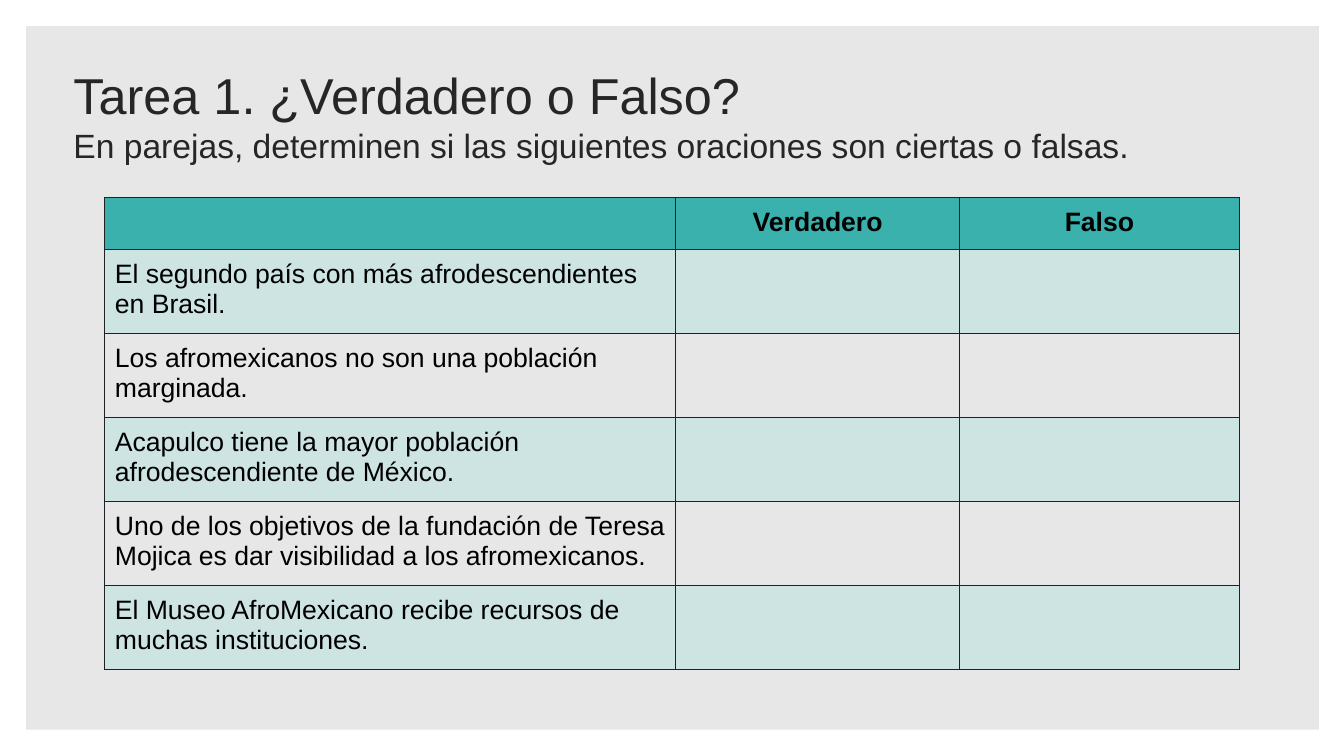
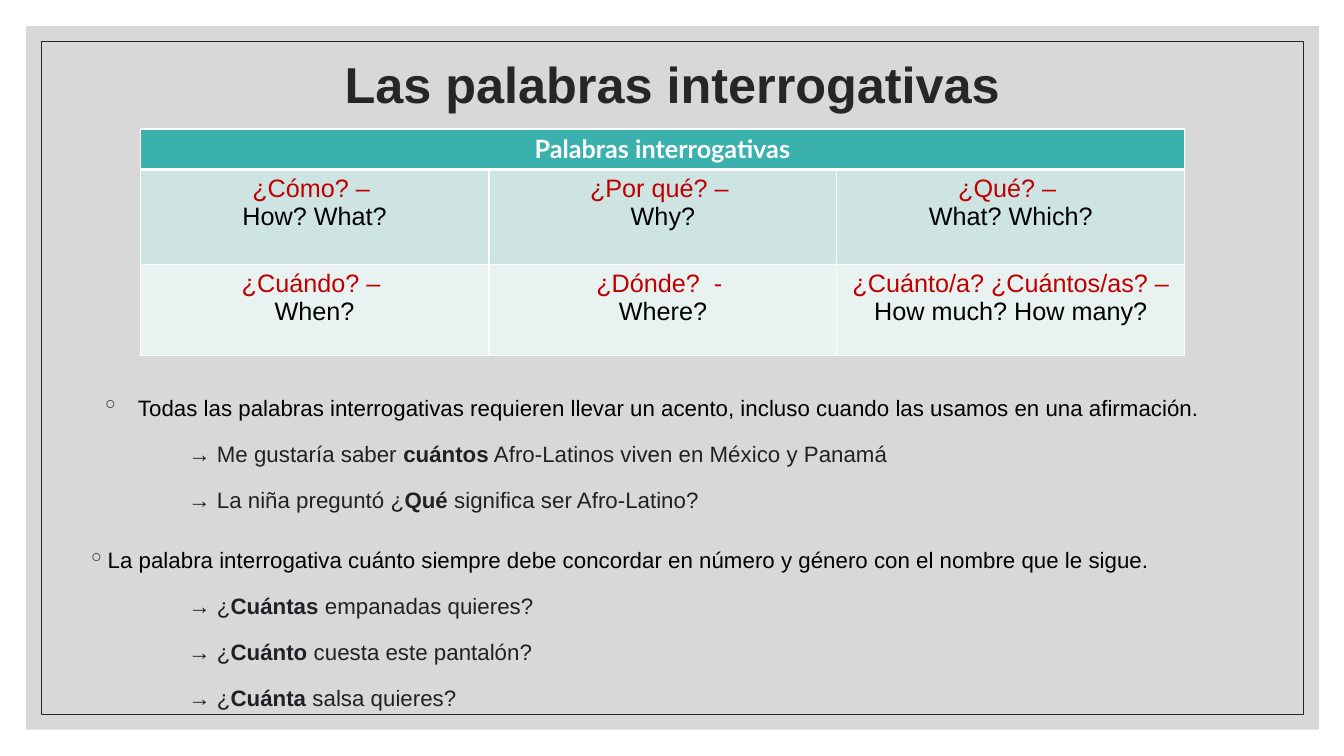
from lxml.etree import SubElement
from pptx import Presentation
from pptx.dml.color import RGBColor
from pptx.enum.shapes import MSO_SHAPE
from pptx.enum.text import MSO_ANCHOR, PP_ALIGN
from pptx.oxml import parse_xml
from pptx.oxml.ns import nsdecls, qn
from pptx.util import Pt

PX = 9144  # 100 px to the inch
FONT = "Arial"
HEADER_FONT = "Lato"
WHITE = RGBColor(0xFF, 0xFF, 0xFF)
BLACK = RGBColor(0x00, 0x00, 0x00)
INK = RGBColor(0x26, 0x26, 0x26)
DARK = RGBColor(0x20, 0x21, 0x24)
RED = RGBColor(0xC0, 0x00, 0x00)
LIGHT_GRAY = RGBColor(0xD8, 0xD8, 0xD8)
MID_GRAY = RGBColor(0xBF, 0xBF, 0xBF)
TEAL = RGBColor(0x3B, 0xB1, 0xAE)
PALE_TEAL = RGBColor(0xCD, 0xE4, 0xE3)
PALEST_TEAL = RGBColor(0xE7, 0xF2, 0xF1)

PANEL = (26, 26, 1282, 698)
FRAME = (41, 41, 1252, 668)

STATEMENTS = [
    "El segundo país con más afrodescendientes en Brasil.",
    "Los afromexicanos no son una población marginada.",
    "Acapulco tiene la mayor población afrodescendiente de México.",
    "Uno de los objetivos de la fundación de Teresa Mojica es dar visibilidad a los afromexicanos.",
    "El Museo AfroMexicano recibe recursos de muchas instituciones.",
]
QUESTION_WORDS = [
    [("¿Cómo? – ", "How? What?"), ("¿Por qué? – ", "Why?"), ("¿Qué? – ", "What? Which?")],
    [("¿Cuándo? – ", "When?"), ("¿Dónde?  - ", "Where?"),
     ("¿Cuánto/a? ¿Cuántos/as? –", "How much? How many?")],
]
# Each rule: text, left indent, hanging indent, space before, examples (start, bold word, end)
RULES = [
    ("Todas las palabras interrogativas requieren llevar un acento, incluso cuando las usamos "
     "en una afirmación.", 50, 36, 0,
     [("→ Me gustaría saber ", "cuántos", " Afro-Latinos viven en México y Panamá"),
      ("→ La niña preguntó ¿", "Qué ", "significa ser Afro-Latino?")]),
    ("La palabra interrogativa cuánto siempre debe concordar en número y género con el nombre "
     "que le sigue.", 20, 20, 20,
     [("→ ¿", "Cuántas", " empanadas quieres?"),
      ("→ ¿", "Cuánto", " cuesta este pantalón?"),
      ("→ ¿", "Cuánta", " salsa quieres?")]),
]


def scaled(box):
    return [length * PX for length in box]


def style_span(span, size, color, bold=False, font=FONT):
    span.font.size = Pt(size)
    span.font.color.rgb = color
    span.font.bold = bold
    span.font.name = font


def style_para(para, size, color, bold=False, align=PP_ALIGN.LEFT, font=FONT):
    para.alignment = align
    for span in para.runs:
        style_span(span, size, color, bold, font)


def add_panel(slide, color):
    """Draw the 60 % opaque panel behind the slide's content."""
    panel = slide.shapes.add_shape(MSO_SHAPE.RECTANGLE, *scaled(PANEL))
    panel.shadow.inherit = False
    panel.fill.solid()
    panel.fill.fore_color.rgb = color
    color_node = panel.fill._xPr.find(qn("a:solidFill"))[0]
    SubElement(color_node, qn("a:alpha")).set("val", "60000")
    panel.line.fill.background()


def add_frame(slide):
    frame = slide.shapes.add_shape(MSO_SHAPE.RECTANGLE, *scaled(FRAME))
    frame.shadow.inherit = False
    frame.fill.background()
    frame.line.color.rgb = INK
    frame.line.width = Pt(0.75)


def add_text_frame(slide, box, anchor=MSO_ANCHOR.TOP):
    text_frame = slide.shapes.add_textbox(*scaled(box)).text_frame
    text_frame.word_wrap = True
    text_frame.vertical_anchor = anchor
    return text_frame


def add_title(slide, box, text, bold=False, align=PP_ALIGN.LEFT):
    para = add_text_frame(slide, box, MSO_ANCHOR.MIDDLE).paragraphs[0]
    para.text = text
    style_para(para, 36, INK, bold, align)
    return para


def add_grid(slide, left, top, widths, heights):
    box = (left, top, sum(widths), sum(heights))
    table = slide.shapes.add_table(len(heights), len(widths), *scaled(box)).table
    table.horz_banding = False
    for column, width in zip(table.columns, widths):
        column.width = width * PX
    for row, height in zip(table.rows, heights):
        row.height = height * PX
    return table


def paint_cell(cell, fill, line_color, left=1, right=1, top=1, bottom=1):
    """Fill a cell, or leave it clear if fill is None, and border it with widths in points."""
    if fill is None:
        cell.fill.background()
    else:
        cell.fill.solid()
        cell.fill.fore_color.rgb = fill
    properties = cell._tc.get_or_add_tcPr()
    sides = {"lnL": left, "lnR": right, "lnT": top, "lnB": bottom}
    for index, (side, width) in enumerate(sides.items()):
        properties.insert(index, parse_xml(
            f'<a:{side} {nsdecls("a")} w="{Pt(width)}"><a:solidFill>'
            f'<a:srgbClr val="{line_color}"/></a:solidFill></a:{side}>'))


def add_statement_table(slide, left, top):
    table = add_grid(slide, left, top, [566, 282, 277], [49] + [79] * len(STATEMENTS))
    rows = [("", "Verdadero", "Falso")] + [(text, "", "") for text in STATEMENTS]
    for row_index, texts in enumerate(rows):
        is_header = row_index == 0
        fill = TEAL if is_header else PALE_TEAL if row_index % 2 else None
        for column_index, text in enumerate(texts):
            cell = table.cell(row_index, column_index)
            cell.margin_top = cell.margin_bottom = cell.margin_left = cell.margin_right = 10 * PX
            paint_cell(cell, fill, DARK, 0.75, 0.75, 0.75, 0.75)
            para = cell.text_frame.paragraphs[0]
            if text:
                para.text = text
            style_para(para, 19, BLACK, is_header,
                       PP_ALIGN.CENTER if is_header else PP_ALIGN.LEFT)


def add_question_table(slide, left, top):
    table = add_grid(slide, left, top, [346, 345, 345], [40, 94, 91])
    header = table.cell(0, 0)
    header.merge(table.cell(0, 2))
    header.text_frame.text = "Palabras interrogativas"
    style_para(header.text_frame.paragraphs[0], 18, WHITE, True, PP_ALIGN.CENTER, HEADER_FONT)
    for column_index in range(3):
        paint_cell(table.cell(0, column_index), TEAL, WHITE, bottom=3)
    for row_index, (words, fill) in enumerate(zip(QUESTION_WORDS, (PALE_TEAL, PALEST_TEAL)), 1):
        for column_index, (spanish, english) in enumerate(words):
            cell = table.cell(row_index, column_index)
            paint_cell(cell, fill, WHITE, top=3 if row_index == 1 else 1)
            first = cell.text_frame.paragraphs[0]
            first.text = spanish
            style_para(first, 18, RED, align=PP_ALIGN.CENTER)
            second = cell.text_frame.add_paragraph()
            second.text = english
            style_para(second, 18, BLACK, align=PP_ALIGN.CENTER)


def indent_para(para, left, hanging=0, bullet=None):
    properties = para._p.get_or_add_pPr()
    properties.set("marL", str(left * PX))
    properties.set("indent", str(-hanging * PX))
    if bullet:
        color = SubElement(SubElement(properties, qn("a:buClr")), qn("a:srgbClr"))
        color.set("val", str(INK))
        SubElement(properties, qn("a:buChar")).set("char", bullet)


def add_rules(slide, box):
    """List the grammar rules as bullets, each with its indented examples."""
    text_frame = add_text_frame(slide, box)
    para = text_frame.paragraphs[0]
    for text, left, hanging, space, examples in RULES:
        if para is None:
            para = text_frame.add_paragraph()
        para.text = text
        para.line_spacing = 1.2
        para.space_before = Pt(space)
        indent_para(para, left, hanging, "◦")
        style_para(para, 15.9, BLACK)
        for parts in examples:
            para = text_frame.add_paragraph()
            para.line_spacing = 1.2
            para.space_before = Pt(10)
            indent_para(para, 100)
            for text_part, bold in zip(parts, (False, True, False)):
                span = para.add_run()
                span.text = text_part
                style_span(span, 15.9, DARK, bold)
        para = None


def build_true_false_slide(slide):
    add_panel(slide, LIGHT_GRAY)
    title = add_title(
        slide, (63, 3, 1222, 221),
        "Tarea 1. ¿Verdadero o Falso? \v"
        "En parejas, determinen si las siguientes oraciones son ciertas o falsas.")
    title.runs[1].font.size = Pt(24)
    add_statement_table(slide, 104, 196)


def build_question_words_slide(slide):
    add_panel(slide, MID_GRAY)
    add_frame(slide)
    title = add_title(slide, (117, 12, 1100, 150), "Las palabras interrogativas",
                      True, PP_ALIGN.CENTER)
    title.line_spacing = 0.9
    add_question_table(slide, 139, 128)
    add_rules(slide, (77, 381, 1140, 201))


def main():
    deck = Presentation()
    deck.slide_width, deck.slide_height = scaled((1333, 750))
    for build in (build_true_false_slide, build_question_words_slide):
        build(deck.slides.add_slide(deck.slide_layouts[6]))
    deck.save("out.pptx")


if __name__ == "__main__":
    main()
